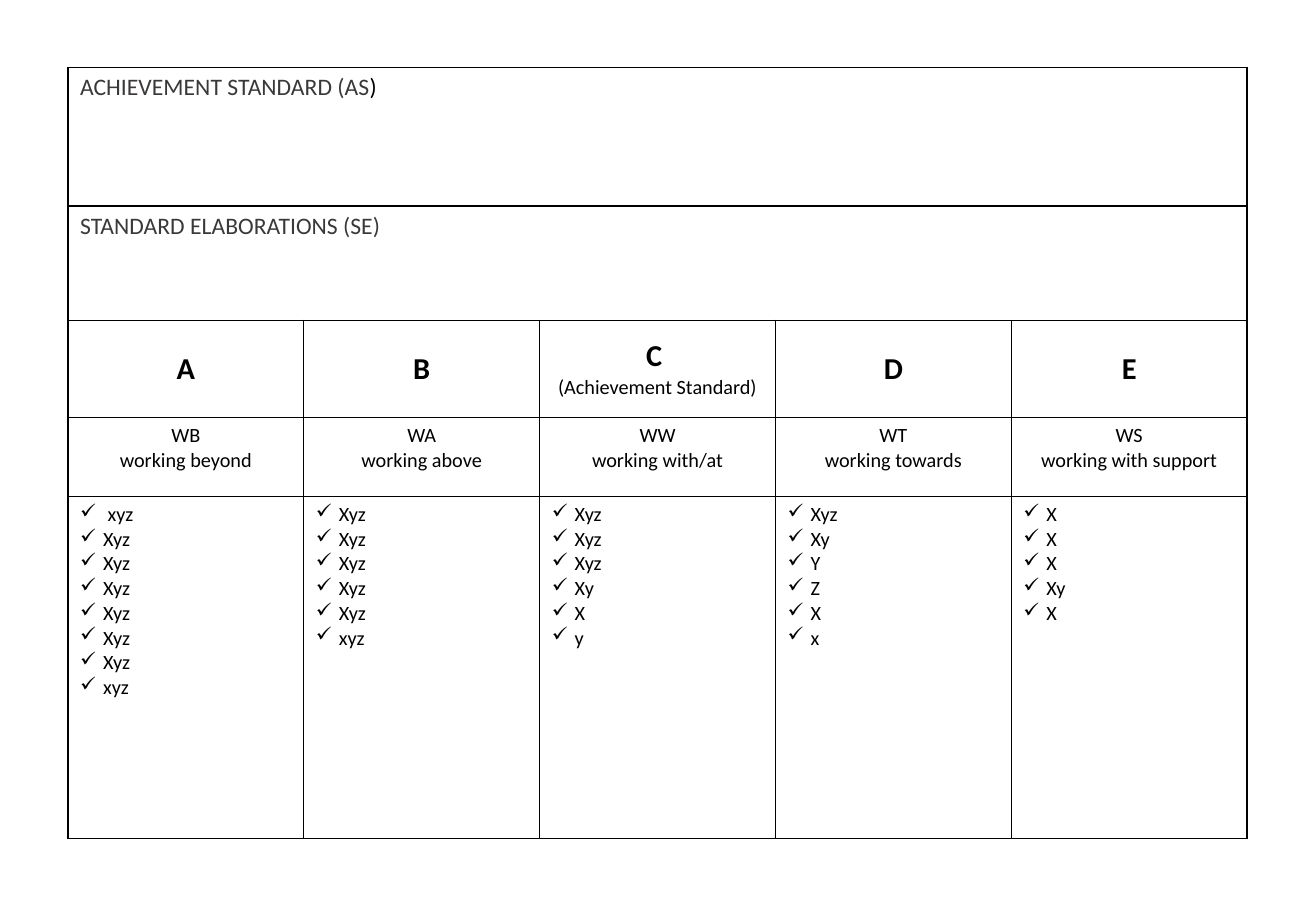
from dataclasses import dataclass

from lxml import etree
from pptx import Presentation
from pptx.dml.color import RGBColor
from pptx.enum.text import MSO_ANCHOR, PP_ALIGN
from pptx.oxml.ns import qn
from pptx.table import Table, _Cell
from pptx.text.text import _Paragraph, _Run
from pptx.util import Cm, Pt

CENTER, LEFT = PP_ALIGN.CENTER, PP_ALIGN.LEFT
MIDDLE, TOP = MSO_ANCHOR.MIDDLE, MSO_ANCHOR.TOP
COLORS = {"text": "000000", "banner": "3B3838", "border": "000000", "cell": "FFFFFF"}
FONT = "Calibri"
COLUMN_WIDTH = Cm(4.93)
ROW_HEIGHTS = [Cm(2.9), Cm(2.39), Cm(2.03), Cm(1.65), Cm(7.16)]
GRADE_ROW, LEVEL_ROW, CRITERIA_ROW = 2, 3, 4
BULLET_INDENT = Cm(0.48)


@dataclass
class Grade:
    letter: str
    code: str
    level: str
    criteria: list[str]
    note: str = ""


BANNERS = [("ACHIEVEMENT STANDARD (AS", ")"), ("STANDARD ELABORATIONS (SE)", "")]
GRADES = [
    Grade("A", "WB", "working beyond", [" xyz", *["Xyz"] * 6, "xyz"]),
    Grade("B", "WA", "working above", [*["Xyz"] * 5, "xyz"]),
    Grade("C ", "WW", "working with/at", [*["Xyz"] * 3, "Xy", "X", "y"],
          "(Achievement Standard)"),
    Grade("D", "WT", "working towards", ["Xyz", "Xy", "Y", "Z", "X", "x"]),
    Grade("E", "WS", "working with support", ["X", "X", "X", "Xy", "X"]),
]


def format_run(run: _Run, size: float, color: str = "text", bold: bool = False) -> None:
    run.font.name = FONT
    run.font.size = Pt(size)
    run.font.bold = bold
    run.font.color.rgb = RGBColor.from_string(COLORS[color])


def style_cell(cell: _Cell) -> None:
    """Give a cell thin borders on all sides and a plain fill."""
    properties = cell._tc.get_or_add_tcPr()
    for side in ("lnL", "lnR", "lnT", "lnB"):
        line = etree.SubElement(properties, qn(f"a:{side}"), w=str(Pt(1)))
        fill = etree.SubElement(line, qn("a:solidFill"))
        etree.SubElement(fill, qn("a:srgbClr"), val=COLORS["border"])
    cell.fill.solid()
    cell.fill.fore_color.rgb = RGBColor.from_string(COLORS["cell"])


def add_check_bullet(paragraph: _Paragraph) -> None:
    properties = paragraph._p.get_or_add_pPr()
    properties.set("marL", str(BULLET_INDENT))
    properties.set("indent", str(-BULLET_INDENT))
    etree.SubElement(properties, qn("a:buChar"), char="✓")


def write_lines(cell: _Cell, lines: list[str], alignment: PP_ALIGN = CENTER,
                anchor: MSO_ANCHOR = TOP) -> list[_Paragraph]:
    cell.text_frame.text = "\n".join(lines)
    cell.vertical_anchor = anchor
    for paragraph in cell.text_frame.paragraphs:
        paragraph.alignment = alignment
        format_run(paragraph.runs[0], 12)
    return list(cell.text_frame.paragraphs)


def fill_banner(table: Table, row: int, title: str, ending: str) -> None:
    cell = table.cell(row, 0)
    cell.merge(table.cell(row, len(GRADES) - 1))
    paragraph = write_lines(cell, [title], LEFT)[0]
    format_run(paragraph.runs[0], 14, "banner")
    if ending:
        run = paragraph.add_run()
        run.text = ending
        format_run(run, 14)


def fill_grade(table: Table, column: int, grade: Grade) -> None:
    heading = [grade.letter, grade.note] if grade.note else [grade.letter]
    letter = write_lines(table.cell(GRADE_ROW, column), heading, anchor=MIDDLE)[0]
    format_run(letter.runs[0], 18, bold=True)

    level_cell = table.cell(LEVEL_ROW, column)
    write_lines(level_cell, [grade.code, grade.level])
    level_cell.margin_bottom = 0

    for paragraph in write_lines(table.cell(CRITERIA_ROW, column), grade.criteria, LEFT):
        add_check_bullet(paragraph)


def main() -> None:
    presentation = Presentation()
    presentation.slide_width, presentation.slide_height = Cm(27.51), Cm(19.05)
    slide = presentation.slides.add_slide(presentation.slide_layouts[6])

    # Table grid
    frame = slide.shapes.add_table(
        len(ROW_HEIGHTS), len(GRADES), Cm(1.42), Cm(1.41),
        COLUMN_WIDTH * len(GRADES), sum(ROW_HEIGHTS))
    table = frame.table
    table.first_row = table.horz_banding = False
    for column in table.columns:
        column.width = COLUMN_WIDTH
    for row, height in zip(table.rows, ROW_HEIGHTS):
        row.height = height
    for cell in table.iter_cells():
        style_cell(cell)

    # Banner rows across the full width
    for row, (title, ending) in enumerate(BANNERS):
        fill_banner(table, row, title, ending)

    # One column per grade
    for column, grade in enumerate(GRADES):
        fill_grade(table, column, grade)

    presentation.save("out.pptx")


if __name__ == "__main__":
    main()
